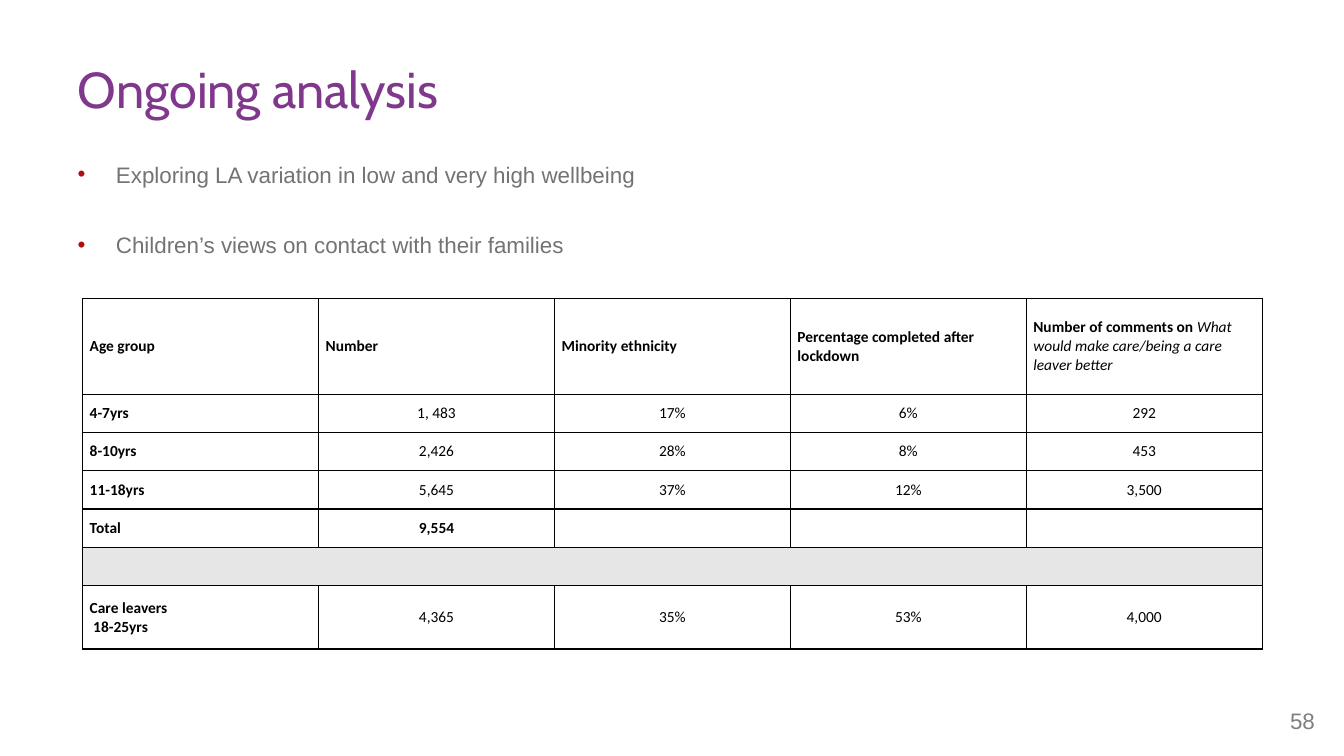
"""Build the ongoing analysis slide with its age group table."""
from lxml import etree
from pptx import Presentation, util as u
from pptx.dml.color import RGBColor
from pptx.enum import text
from pptx.oxml import ns

COLOURS = {"title": "80388D", "body": "747373", "bullet": "B20E10",
           "number": "7F7F7F", "table": "000000", "band": "E7E6E6",
           "paper": "FFFFFF"}
TOPICS = ["Exploring LA variation in low and very high wellbeing",
          "Children’s views on contact with their families"]
HEADINGS = ["Age group", "Number", "Minority ethnicity",
            "Percentage completed after lockdown", "Number of comments on "]
QUESTION = "What would make care/being a care leaver better"
AGE_ROWS = [["4-7yrs", "1, 483", "17%", "6%", "292"],
            ["8-10yrs", "2,426", "28%", "8%", "453"],
            ["11-18yrs", "5,645", "37%", "12%", "3,500"],
            ["Total", "9,554", "", "", ""],
            ["", "", "", "", ""],
            ["Care leavers\n 18-25yrs", "4,365", "35%", "53%", "4,000"]]
ROW_HEIGHTS = [0.95] + [0.38] * 5 + [0.63]
TOTAL_ROW, BAND_ROW = 4, 5


def add_xml(parent, tag, **attributes):
    return etree.SubElement(parent, ns.qn(tag), attributes)


def add_run(paragraph, words, size, font, colour, bold=False, italic=False):
    run = paragraph.add_run()
    run.text = words
    run.font.size = u.Pt(size)
    run.font.name = font
    run.font.bold = bold
    run.font.italic = italic
    run.font.color.rgb = RGBColor.from_string(COLOURS[colour])


def place(shape, left, top, width, height):
    shape.left, shape.top = u.Inches(left), u.Inches(top)
    shape.width, shape.height = u.Inches(width), u.Inches(height)


def add_title(slide):
    title = slide.shapes.title
    place(title, 0.67, 0.25, 12, 1.25)
    title.text_frame.vertical_anchor = text.MSO_ANCHOR.MIDDLE
    title.text_frame.auto_size = text.MSO_AUTO_SIZE.NONE
    heading = title.text_frame.paragraphs[0]
    heading.alignment = text.PP_ALIGN.LEFT
    add_run(heading, "Ongoing analysis", 36, "Cabin", "title")


def add_topics(slide):
    body = slide.placeholders[1]
    place(body, 0.67, 1.52, 12, 4.95)
    frame = body.text_frame
    frame.auto_size = text.MSO_AUTO_SIZE.NONE
    for index, topic in enumerate(TOPICS):
        paragraph = frame.add_paragraph() if index else frame.paragraphs[0]
        properties = paragraph._p.get_or_add_pPr()
        properties.set("marL", str(u.Inches(0.38)))
        properties.set("indent", str(u.Inches(-0.38)))
        bullet_colour = add_xml(properties, "a:buClr")
        add_xml(bullet_colour, "a:srgbClr", val=COLOURS["bullet"])
        add_xml(properties, "a:buFont", typeface="Arial")
        add_xml(properties, "a:buChar", char="•")
        paragraph.line_spacing = 1.1
        paragraph.space_before = u.Pt(29 if index else 0)
        add_run(paragraph, topic, 16, "Arial", "body")


def style_cell(cell, fill):
    cell.vertical_anchor = text.MSO_ANCHOR.MIDDLE
    cell.margin_left = cell.margin_right = u.Inches(0.07)
    cell.margin_top = cell.margin_bottom = u.Inches(0.05)
    properties = cell._tc.get_or_add_tcPr()
    for side in ("a:lnL", "a:lnR", "a:lnT", "a:lnB"):
        border = add_xml(properties, side, w=str(u.Pt(1)))
        border_fill = add_xml(border, "a:solidFill")
        add_xml(border_fill, "a:srgbClr", val=COLOURS["table"])
    cell.fill.solid()
    cell.fill.fore_color.rgb = RGBColor.from_string(COLOURS[fill])


def write_cell(cell, words, bold, centred):
    frame = cell.text_frame
    for index, line in enumerate(words.split("\n")):
        paragraph = frame.add_paragraph() if index else frame.paragraphs[0]
        if centred:
            paragraph.alignment = text.PP_ALIGN.CENTER
        if line:
            add_run(paragraph, line, 11, "Calibri", "table", bold)
        else:
            add_xml(paragraph._p, "a:endParaRPr", sz="1100")


def add_age_table(slide):
    rows = [HEADINGS] + AGE_ROWS
    frame = slide.shapes.add_table(
        len(rows), len(HEADINGS), u.Inches(0.82), u.Inches(2.96),
        u.Inches(11.7), u.Inches(sum(ROW_HEIGHTS)))
    table = frame.table
    table.first_row = table.horz_banding = False
    for column in table.columns:
        column.width = u.Inches(2.34)
    for row, (height, values) in enumerate(zip(ROW_HEIGHTS, rows)):
        table.rows[row].height = u.Inches(height)
        for column, words in enumerate(values):
            cell = table.cell(row, column)
            style_cell(cell, "band" if row == BAND_ROW else "paper")
            bold = row in (0, TOTAL_ROW) or column == 0
            write_cell(cell, words, bold, row > 0 and column > 0)
    comments = table.cell(0, len(HEADINGS) - 1).text_frame.paragraphs[0]
    add_run(comments, QUESTION, 11, "Calibri", "table", italic=True)
    table.cell(BAND_ROW, 0).merge(table.cell(BAND_ROW, len(HEADINGS) - 1))


def add_page_number(slide):
    box = slide.shapes.add_textbox(
        u.Inches(11.88), u.Inches(6.97), u.Inches(1.26), u.Inches(0.4))
    box.text_frame.word_wrap = True
    number = box.text_frame.paragraphs[0]
    number.alignment = text.PP_ALIGN.RIGHT
    add_run(number, "58", 16, "Arial", "number")


def main():
    deck = Presentation()
    deck.slide_width, deck.slide_height = u.Inches(13.33), u.Inches(7.5)
    slide = deck.slides.add_slide(deck.slide_layouts[1])
    add_title(slide)
    add_topics(slide)
    add_age_table(slide)
    add_page_number(slide)
    deck.save("out.pptx")


if __name__ == "__main__":
    main()
